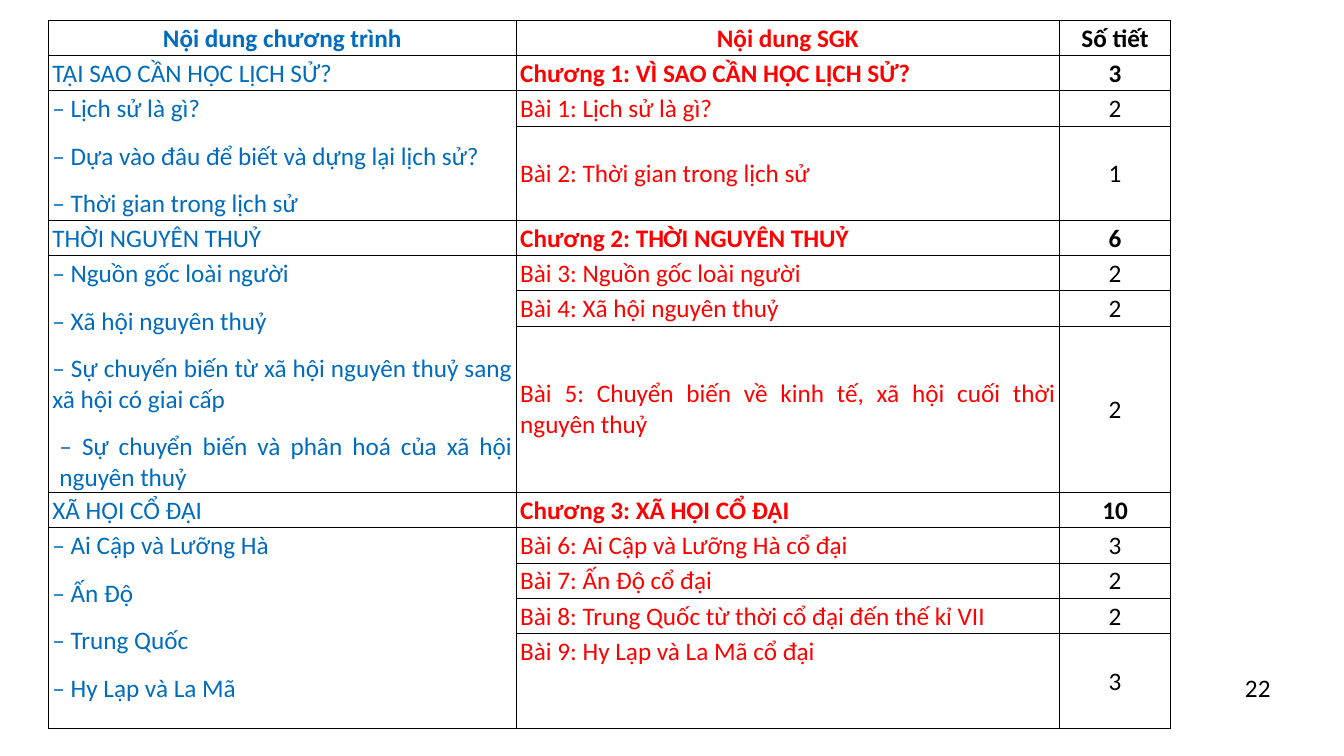
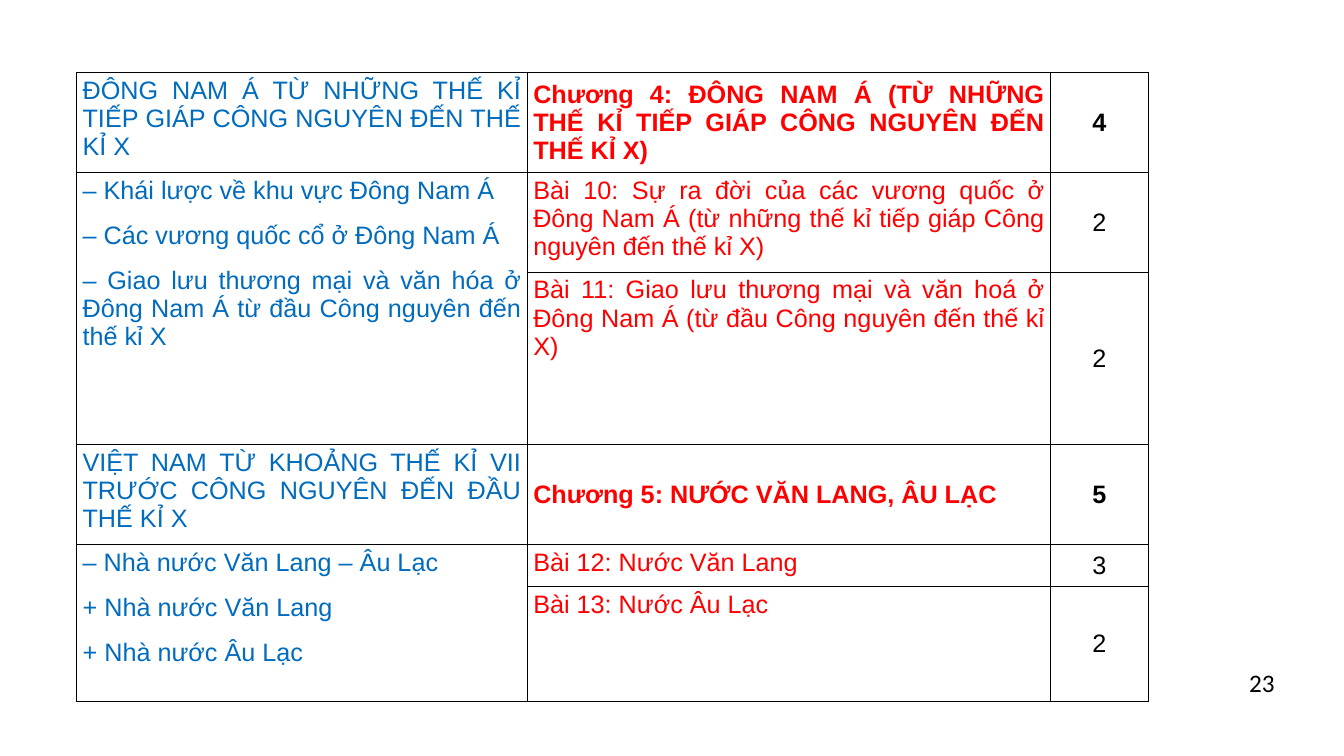
from dataclasses import dataclass

from lxml import etree
from pptx import Presentation
from pptx.dml.color import RGBColor
from pptx.enum.text import MSO_ANCHOR, PP_ALIGN
from pptx.oxml.ns import qn
from pptx.util import Inches, Pt

TOP, MIDDLE = MSO_ANCHOR.TOP, MSO_ANCHOR.MIDDLE
CENTER, JUSTIFY = PP_ALIGN.CENTER, PP_ALIGN.JUSTIFY
COLORS = {"programme": "016CBD", "textbook": "FF0000", "plain": "000000"}
BLANK_LAYOUT = 6
TEXT_SIZE = Pt(18)
PARAGRAPH_GAP = Pt(6)
BORDER_WIDTH = Pt(0.5)


@dataclass
class Lesson:
    height: float
    programme: tuple
    textbook: str
    periods: str
    anchor: int = MIDDLE
    last_indent: float = 0
    header: bool = False


@dataclass
class TableStyle:
    font: str
    left: float
    top: float
    widths: tuple
    insets: tuple


def format_font(font, name, color, bold=False):
    font.name = name
    font.size = TEXT_SIZE
    font.bold = bold
    font.color.rgb = RGBColor.from_string(COLORS[color])


def add_borders(cell):
    properties = cell._tc.get_or_add_tcPr()
    for tag in ("a:lnL", "a:lnR", "a:lnT", "a:lnB"):
        line = etree.SubElement(properties, qn(tag), w=str(BORDER_WIDTH))
        fill = etree.SubElement(line, qn("a:solidFill"))
        etree.SubElement(fill, qn("a:srgbClr"), val=COLORS["plain"])


def fill_cell(cell, paragraphs, style, color, alignment, anchor, bold=False, last_indent=0):
    cell.vertical_anchor = anchor
    frame = cell.text_frame
    for index, text in enumerate(paragraphs):
        paragraph = frame.add_paragraph() if index else frame.paragraphs[0]
        paragraph.text = text
        paragraph.alignment = alignment
        if index:
            paragraph.space_before = PARAGRAPH_GAP
        paragraph.space_after = PARAGRAPH_GAP
        format_font(paragraph.font, style.font, color, bold)
    if last_indent:
        paragraph._p.get_or_add_pPr().set("marL", str(Inches(last_indent)))


def merge_programme_cells(table, lessons):
    starts = [index for index, lesson in enumerate(lessons) if lesson.programme]
    for start, end in zip(starts, starts[1:] + [len(lessons)]):
        if end - start > 1:
            table.cell(start, 0).merge(table.cell(end - 1, 0))


def add_lesson_table(slide, style, lessons):
    shape = slide.shapes.add_table(
        len(lessons), len(style.widths), Inches(style.left), Inches(style.top),
        Inches(sum(style.widths)), Inches(sum(lesson.height for lesson in lessons)))
    table = shape.table
    table.first_row = table.horz_banding = False
    for column, width in zip(table.columns, style.widths):
        column.width = Inches(width)
    for cell in table.iter_cells():
        cell.margin_left, cell.margin_top, cell.margin_right, cell.margin_bottom = map(
            Inches, style.insets)
        add_borders(cell)
        cell.fill.background()
    for row, lesson in zip(table.rows, lessons):
        row.height = Inches(lesson.height)
        programme, textbook, periods = row.cells
        bold = lesson.header or lesson.textbook.startswith("Chương")
        alignment = CENTER if lesson.header else JUSTIFY
        fill_cell(programme, lesson.programme, style, "programme", alignment, TOP,
                  lesson.header, lesson.last_indent)
        fill_cell(textbook, [lesson.textbook], style, "textbook", alignment,
                  lesson.anchor, bold)
        fill_cell(periods, [lesson.periods], style, "plain", CENTER, MIDDLE, bold)
    merge_programme_cells(table, lessons)


def add_page_number(slide, number, left, top):
    box = slide.shapes.add_textbox(Inches(left), Inches(top), Inches(0.64), Inches(0.4))
    box.text_frame.word_wrap = True
    paragraph = box.text_frame.paragraphs[0]
    paragraph.text = number
    format_font(paragraph.font, "Calibri", "plain")


def add_lesson_slide(presentation, style, lessons, number, number_left, number_top):
    slide = presentation.slides.add_slide(presentation.slide_layouts[BLANK_LAYOUT])
    add_page_number(slide, number, number_left, number_top)
    add_lesson_table(slide, style, lessons)


ANCIENT_STYLE = TableStyle("Calibri", 0.48, 0.2, (4.64, 5.39, 1.1), (0.04, 0.03, 0.04, 0.02))
ANCIENT_LESSONS = [
    Lesson(0.35, ("Nội dung chương trình",), "Nội dung SGK", "Số tiết", header=True),
    Lesson(0.35, ("TẠI SAO CẦN HỌC LỊCH SỬ?",), "Chương 1: VÌ SAO CẦN HỌC LỊCH SỬ?", "3"),
    Lesson(0.35, ("– Lịch sử là gì?",
                  "– Dựa vào đâu để biết và dựng lại lịch sử?",
                  "– Thời gian trong lịch sử"), "Bài 1: Lịch sử là gì?", "2"),
    Lesson(0.93, (), "Bài 2: Thời gian trong lịch sử", "1"),
    Lesson(0.35, ("THỜI NGUYÊN THUỶ",), "Chương 2: THỜI NGUYÊN THUỶ", "6"),
    Lesson(0.35, ("– Nguồn gốc loài người",
                  "– Xã hội nguyên thuỷ",
                  "– Sự chuyến biến từ xã hội nguyên thuỷ sang xã hội có giai cấp",
                  "– Sự chuyển biến và phân hoá của xã hội nguyên thuỷ"),
           "Bài 3: Nguồn gốc loài người", "2", last_indent=0.07),
    Lesson(0.35, (), "Bài 4: Xã hội nguyên thuỷ", "2"),
    Lesson(1.64, (), "Bài 5: Chuyển biến về kinh tế, xã hội cuối thời nguyên thuỷ", "2"),
    Lesson(0.35, ("XÃ HỘI CỔ ĐẠI",), "Chương 3: XÃ HỘI CỔ ĐẠI", "10"),
    Lesson(0.35, ("– Ai Cập và Lưỡng Hà", "– Ấn Độ", "– Trung Quốc", "– Hy Lạp và La Mã"),
           "Bài 6: Ai Cập và Lưỡng Hà cổ đại", "3", TOP),
    Lesson(0.35, (), "Bài 7: Ấn Độ cổ đại", "2", TOP),
    Lesson(0.35, (), "Bài 8: Trung Quốc từ thời cổ đại đến thế kỉ VII", "2", TOP),
    Lesson(0.94, (), "Bài 9: Hy Lạp và La Mã cổ đại", "3", TOP),
]

REGION_STYLE = TableStyle("Arial", 0.76, 0.72, (4.47, 5.19, 0.97), (0.06, 0.04, 0.06, 0.04))
REGION_LESSONS = [
    Lesson(0.99, ("ĐÔNG NAM Á TỪ NHỮNG THẾ KỈ TIẾP GIÁP CÔNG NGUYÊN ĐẾN THẾ KỈ X",),
           "Chương 4: ĐÔNG NAM Á (TỪ NHỮNG THẾ KỈ TIẾP GIÁP CÔNG NGUYÊN ĐẾN THẾ KỈ X)", "4"),
    Lesson(0.99, ("– Khái lược về khu vực Đông Nam Á",
                  "– Các vương quốc cổ ở Đông Nam Á",
                  "– Giao lưu thương mại và văn hóa ở Đông Nam Á từ đầu Công nguyên "
                  "đến thế kỉ X"),
           "Bài 10: Sự ra đời của các vương quốc ở Đông Nam Á "
           "(từ những thế kỉ tiếp giáp Công nguyên đến thế kỉ X)", "2", TOP),
    Lesson(1.71, (), "Bài 11: Giao lưu thương mại và văn hoá ở Đông Nam Á "
           "(từ đầu Công nguyên đến thế kỉ X)", "2", TOP),
    Lesson(0.99, ("VIỆT NAM TỪ KHOẢNG THẾ KỈ VII TRƯỚC CÔNG NGUYÊN ĐẾN ĐẦU THẾ KỈ X",),
           "Chương 5: NƯỚC VĂN LANG, ÂU LẠC", "5"),
    Lesson(0.42, ("– Nhà nước Văn Lang – Âu Lạc",
                  "+ Nhà nước Văn Lang",
                  "+ Nhà nước Âu Lạc"), "Bài 12: Nước Văn Lang", "3", TOP),
    Lesson(1.14, (), "Bài 13: Nước Âu Lạc", "2", TOP),
]


def main():
    presentation = Presentation()
    presentation.slide_width = Inches(13.33)
    presentation.slide_height = Inches(7.5)
    add_lesson_slide(presentation, ANCIENT_STYLE, ANCIENT_LESSONS, "22", 12.25, 6.62)
    add_lesson_slide(presentation, REGION_STYLE, REGION_LESSONS, "23", 12.29, 6.57)
    presentation.save("out.pptx")


if __name__ == "__main__":
    main()
